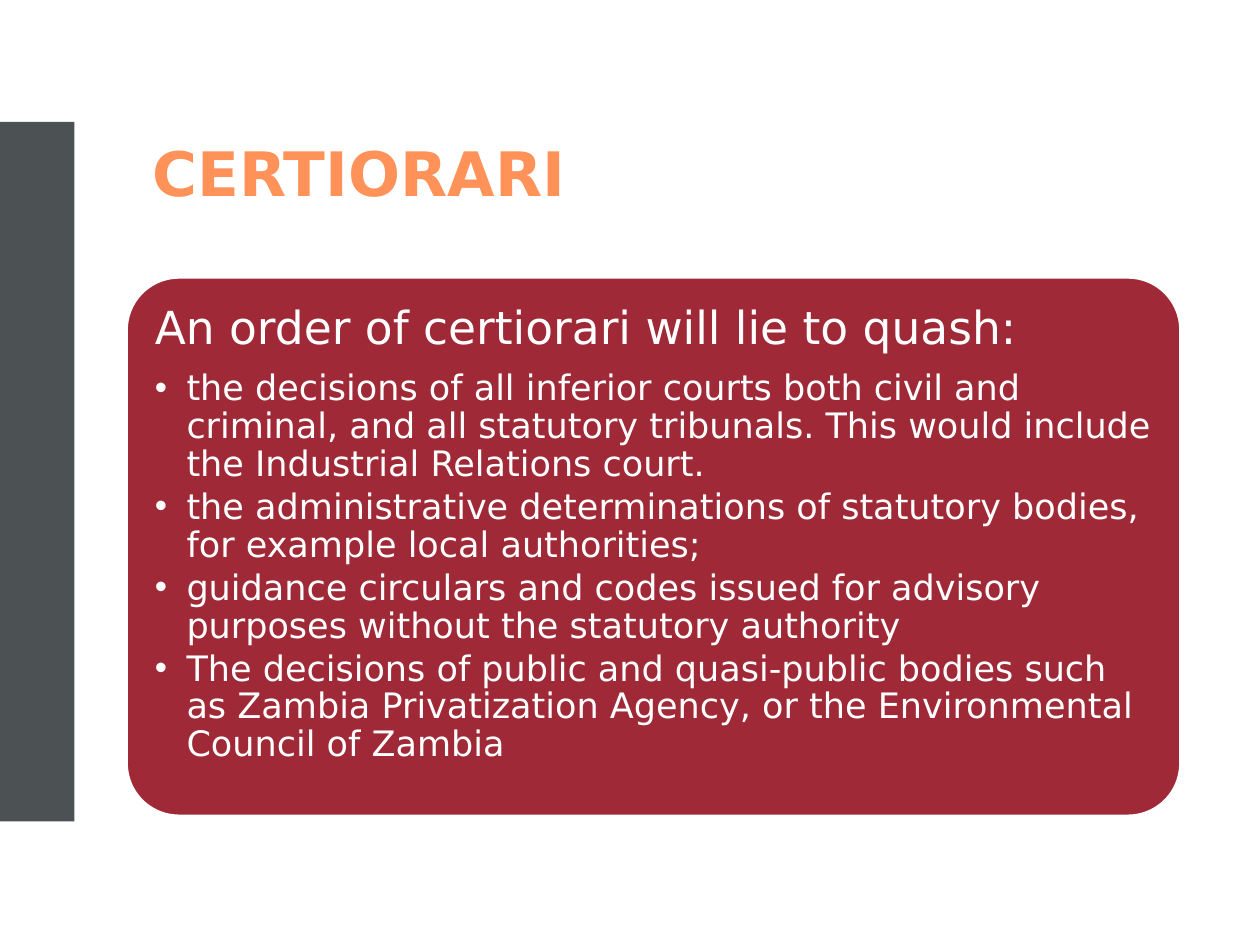
from lxml import etree
from pptx import Presentation
from pptx.dml.color import RGBColor
from pptx.enum.shapes import MSO_SHAPE
from pptx.enum.text import MSO_ANCHOR, MSO_AUTO_SIZE, PP_ALIGN
from pptx.oxml.ns import qn
from pptx.util import Cm, Pt

RECTANGLE, ROUNDED = MSO_SHAPE.RECTANGLE, MSO_SHAPE.ROUNDED_RECTANGLE
TOP, BOTTOM = MSO_ANCHOR.TOP, MSO_ANCHOR.BOTTOM
LEFT, NO_AUTOFIT = PP_ALIGN.LEFT, MSO_AUTO_SIZE.NONE

COLORS = {"title": "FF9258", "band": "4C5254", "panel": "9F2936", "white": "FFFFFF"}
FONT = "DejaVu Sans"

LEAD = "An order of certiorari will lie to quash:"
GROUNDS = [
    "the decisions of all inferior courts both civil and criminal, and all statutory "
    "tribunals. This would include the Industrial Relations court.",
    "the administrative determinations of statutory bodies, for example local authorities;",
    "guidance circulars and codes issued for advisory purposes without the statutory authority",
    "The decisions of public and quasi-public bodies such as Zambia Privatization Agency, "
    "or the Environmental Council of Zambia",
]


def rgb(name):
    return RGBColor.from_string(COLORS[name])


def write(paragraph, text, size, color, bold=False, bullet=None, level=0,
          line_spacing=1.0, after=0):
    paragraph.level = level
    paragraph.alignment = LEFT
    paragraph.line_spacing = line_spacing
    paragraph.space_before = Pt(0)
    paragraph.space_after = Pt(after)
    properties = paragraph._p.get_or_add_pPr()
    indent = Cm(0.64) if bullet else 0
    properties.set("marL", str(indent))
    properties.set("indent", str(-indent))
    if bullet:
        etree.SubElement(properties, qn("a:buChar")).set("char", bullet)
    else:
        etree.SubElement(properties, qn("a:buNone"))
    run = paragraph.add_run()
    run.text = text
    run.font.name = FONT
    run.font.size = Pt(size)
    run.font.bold = bold
    run.font.color.rgb = rgb(color)


def place(placeholder, left, top, width, height, anchor):
    placeholder.left, placeholder.top = left, top
    placeholder.width, placeholder.height = width, height
    frame = placeholder.text_frame
    frame.word_wrap = True
    frame.auto_size = NO_AUTOFIT
    frame.vertical_anchor = anchor
    return frame


def add_block(slide, kind, box, color):
    block = slide.shapes.add_shape(kind, *box)
    block.shadow.inherit = False
    block.fill.solid()
    block.fill.fore_color.rgb = rgb(color)
    block.line.fill.background()
    return block


def build_heading(slide, box):
    frame = place(slide.shapes.title, *box, BOTTOM)
    write(frame.paragraphs[0], "CERTIORARI", size=35, color="title", bold=True)


def build_grounds(slide, box):
    left, top, width, height = box
    panel = add_block(slide, ROUNDED, box, "panel")
    panel.adjustments[0] = 0.1
    panel.line.color.rgb = rgb("white")
    panel.line.width = Pt(3.35)

    body = slide.placeholders[1]
    body._element.addprevious(panel._element)
    inset = Cm(0.32)
    frame = place(body, left + inset, top + inset,
                  width - 2 * inset, height - 2 * inset, TOP)
    frame.margin_left = frame.margin_right = Cm(0.28)
    frame.margin_top = frame.margin_bottom = Cm(0.28)
    write(frame.paragraphs[0], LEAD, size=26, color="white", line_spacing=0.9, after=9)
    for ground in GROUNDS:
        write(frame.add_paragraph(), ground, size=20, color="white", bullet="•",
              level=1, line_spacing=0.9, after=3)


def main():
    deck = Presentation()
    deck.slide_width, deck.slide_height = Cm(25.4), Cm(19.05)
    slide = deck.slides.add_slide(deck.slide_layouts[1])
    add_block(slide, RECTANGLE, (0, Cm(2.46), Cm(1.5), Cm(14.1)), "band")
    build_heading(slide, (Cm(2.82), Cm(0.61), Cm(20.73), Cm(3.73)))
    build_grounds(slide, (Cm(2.52), Cm(5.56), Cm(21.31), Cm(10.92)))
    deck.save("out.pptx")


if __name__ == "__main__":
    main()
